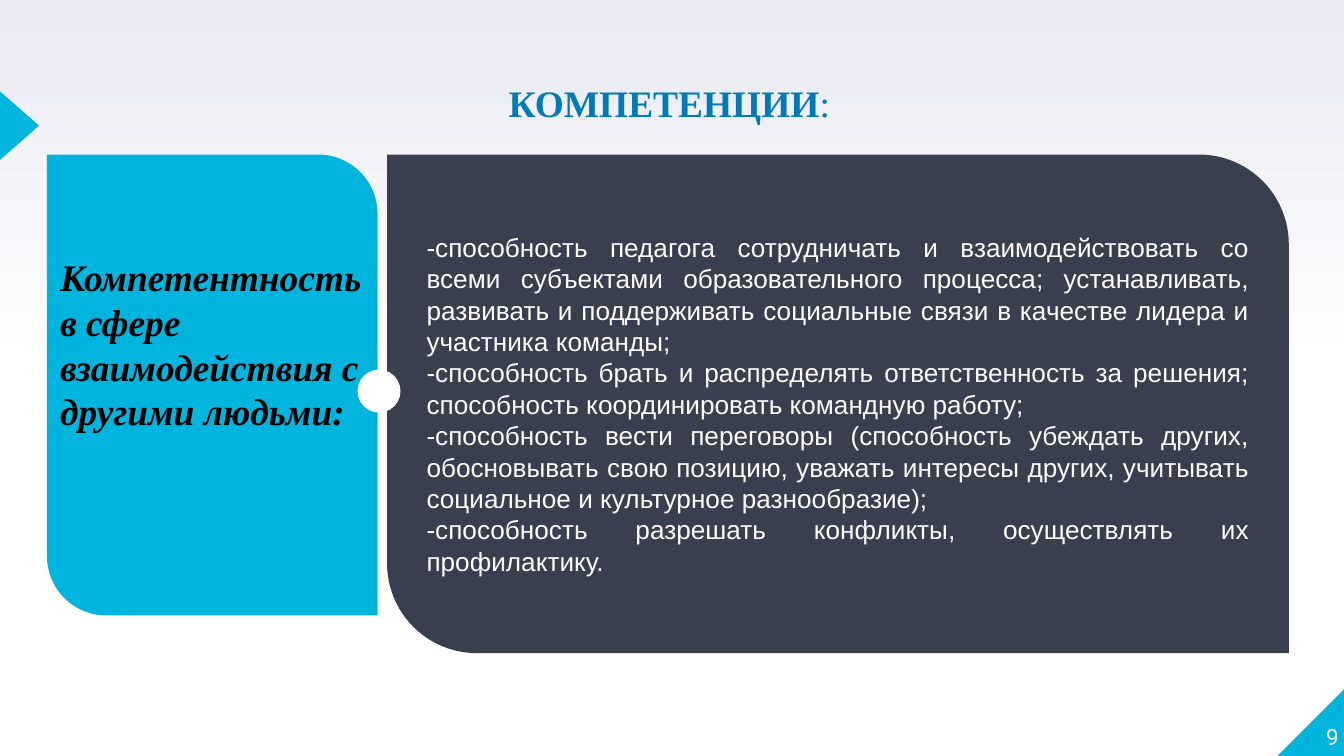
from pptx import Presentation
from pptx.dml.color import RGBColor
from pptx.enum.shapes import MSO_SHAPE as SHAPE
from pptx.enum.text import MSO_ANCHOR as ANCHOR, PP_ALIGN as ALIGN
from pptx.util import Inches, Pt

CYAN = RGBColor(0x00, 0xB5, 0xDD)
BLUE = RGBColor(0x00, 0x7B, 0xB9)
SLATE = RGBColor(0x3A, 0x3F, 0x50)
LAVENDER = RGBColor(0xE9, 0xEA, 0xF2)
WHITE = RGBColor(0xFF, 0xFF, 0xFF)
BLACK = RGBColor(0x00, 0x00, 0x00)

presentation = Presentation()
presentation.slide_width = Inches(10)
presentation.slide_height = Inches(10) * 9 // 16
slide = presentation.slides.add_slide(presentation.slide_layouts[6])

background = slide.background.fill
background.gradient()
background.gradient_angle = 90
for stop, position, color in zip(background.gradient_stops, (0.5, 1), (WHITE, LAVENDER)):
    stop.position = position
    stop.color.rgb = color


def add_filled_shape(kind, left, top, width, height, color):
    shape = slide.shapes.add_shape(
        kind, Inches(left), Inches(top), Inches(width), Inches(height))
    shape.shadow.inherit = False
    shape.fill.solid()
    shape.fill.fore_color.rgb = color
    shape.line.fill.background()
    return shape


def write_text(shape, lines, font_name, size, color, align, anchor, inset):
    frame = shape.text_frame
    frame.word_wrap = True
    frame.vertical_anchor = anchor
    frame.margin_left = frame.margin_right = Inches(inset)
    frame.margin_top = frame.margin_bottom = Inches(inset)
    frame.text = "\n".join(lines)
    for paragraph in frame.paragraphs:
        paragraph.alignment = align
        paragraph.font.name = font_name
        paragraph.font.size = Pt(size)
        paragraph.font.color.rgb = color
    return frame.paragraphs[0]


corner = add_filled_shape(SHAPE.RIGHT_TRIANGLE, 9.5, 5.12, 0.51, 0.51, CYAN)
corner._element.spPr.xfrm.set("flipH", "1")
marker = add_filled_shape(SHAPE.ISOSCELES_TRIANGLE, -0.11, 0.79, 0.51, 0.29, CYAN)
marker.rotation = 90

title = slide.shapes.add_textbox(Inches(0.5), Inches(0.66), Inches(8.96), Inches(0.38))
heading = write_text(title, ["КОМПЕТЕНЦИИ"], "Times New Roman", 20, BLUE,
                     ALIGN.CENTER, ANCHOR.TOP, 0)
heading.line_spacing = 0.8
heading.runs[0].font.bold = True
heading.add_run().text = ":"

page_number = slide.shapes.add_textbox(Inches(9.46), Inches(5.07), Inches(0.5), Inches(0.51))
write_text(page_number, ["9"], "Roboto", 12, WHITE, ALIGN.RIGHT, ANCHOR.BOTTOM, 0)

topic_panel = add_filled_shape(SHAPE.ROUND_2_DIAG_RECTANGLE, 0.35, 1.15, 2.46, 3.43, CYAN)
skills_panel = add_filled_shape(SHAPE.ROUND_2_DIAG_RECTANGLE, 2.88, 1.15, 6.71, 3.71, SLATE)
for panel in (topic_panel, skills_panel):
    panel.adjustments[0] = 0
    panel.adjustments[1] = 0.18

topic = slide.shapes.add_textbox(Inches(0.35), Inches(1.79), Inches(2.53), Inches(2.72))
topic_text = write_text(
    topic, ["Компетентность в сфере взаимодействия с другими людьми:"],
    "Times New Roman", 20, BLACK, ALIGN.LEFT, ANCHOR.TOP, 0.1)
topic_text.font.bold = True
topic_text.font.italic = True

skills = [
    "-способность педагога сотрудничать и взаимодействовать со всеми субъектами "
    "образовательного процесса; устанавливать, развивать и поддерживать социальные "
    "связи в качестве лидера и участника команды; ",
    "-способность брать и распределять ответственность за решения; способность "
    "координировать командную работу; ",
    "-способность вести переговоры (способность убеждать других, обосновывать свою "
    "позицию, уважать интересы других, учитывать социальное и культурное разнообразие); ",
    "-способность разрешать конфликты, осуществлять их профилактику. ",
]
write_text(skills_panel, skills, "Arial", 14, WHITE, ALIGN.JUSTIFY, ANCHOR.MIDDLE, 0.1)

add_filled_shape(SHAPE.OVAL, 2.66, 2.75, 0.32, 0.32, WHITE)

presentation.save("out.pptx")
